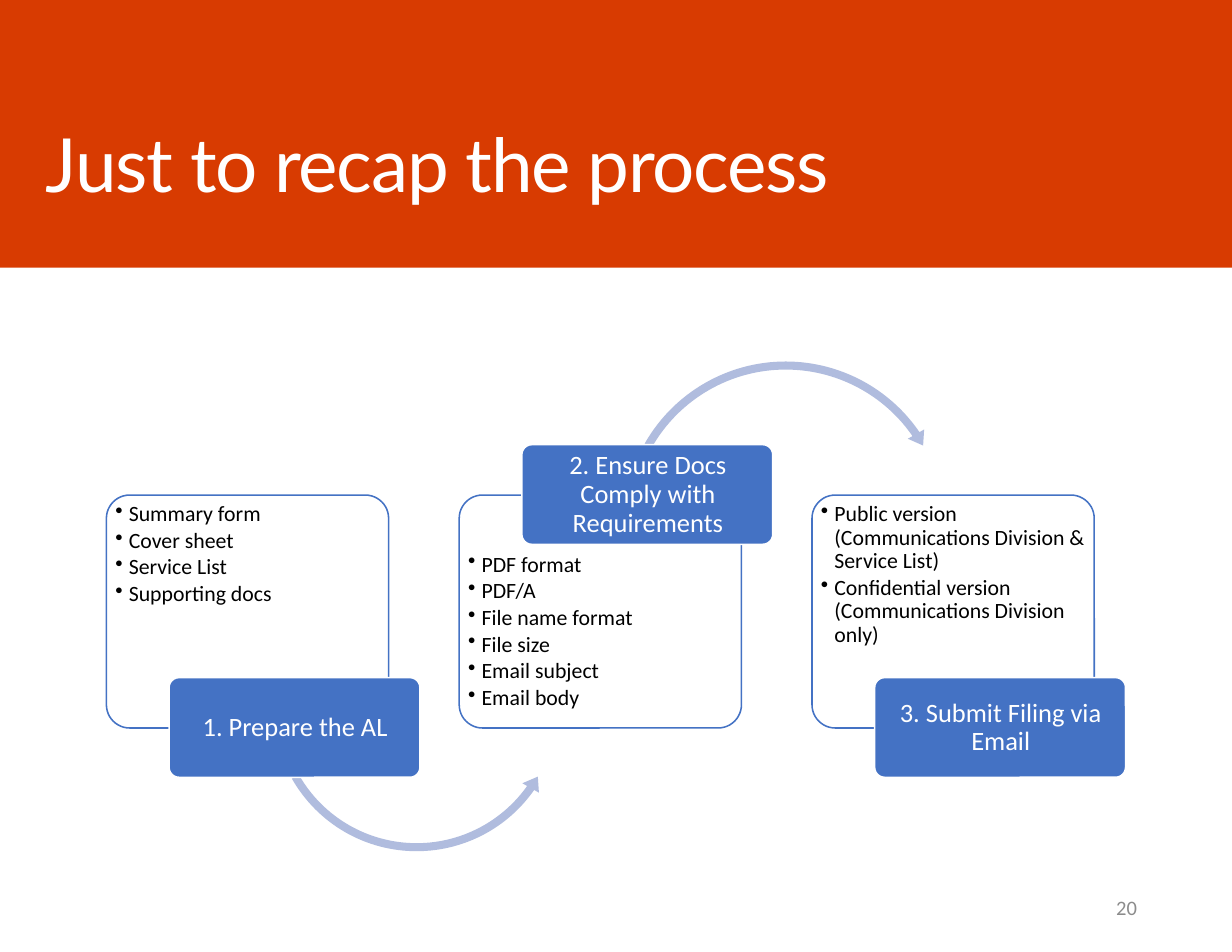
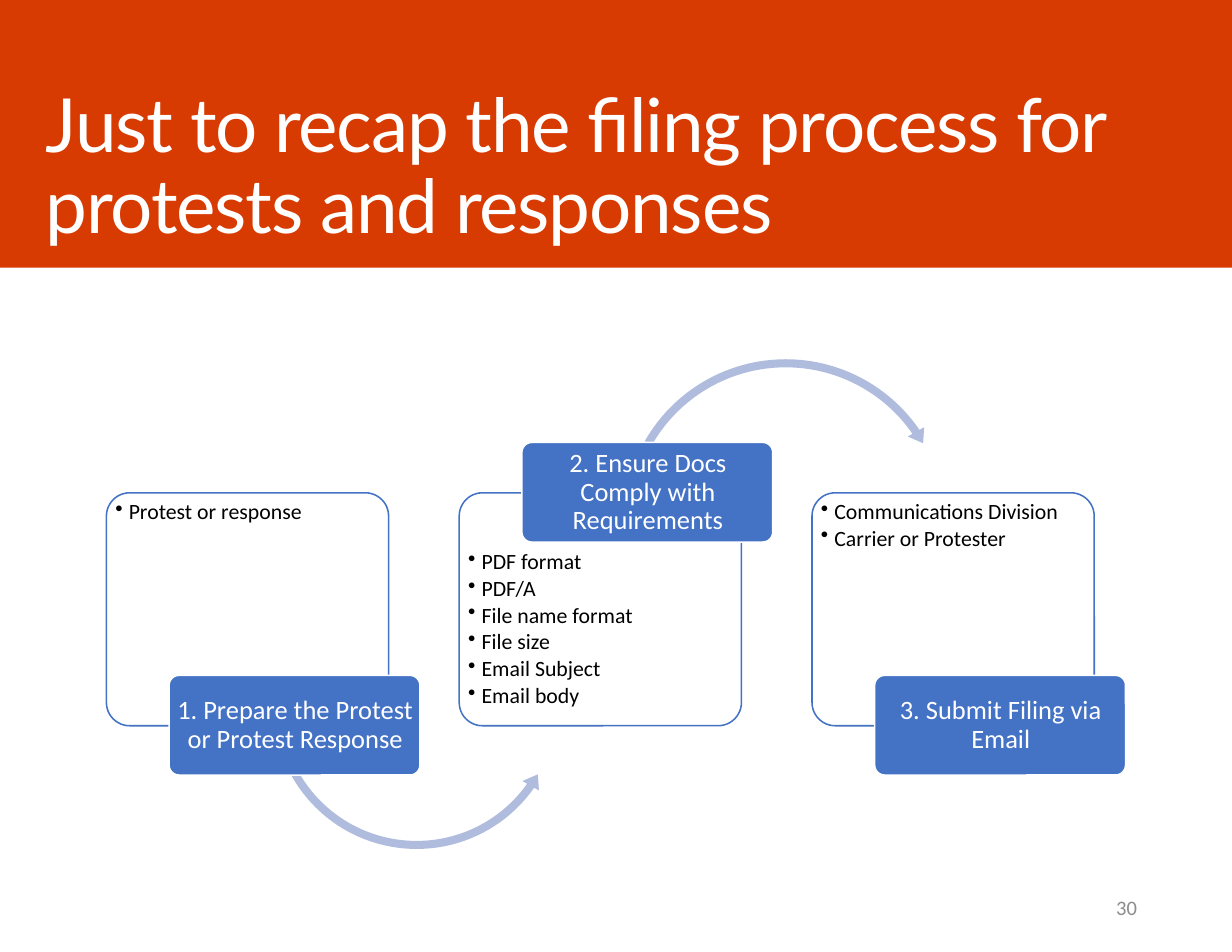
from lxml import etree
from pptx import Presentation
from pptx import util as u
from pptx.dml.color import RGBColor
from pptx.enum import shapes, text
from pptx.oxml.ns import qn

DECKS = [
    dict(title="Just to recap the process", page="20", top=4.42, steps=[
        ("1. Prepare the AL",
         ["Summary form", "Cover sheet", "Service List", "Supporting docs"]),
        ("2. Ensure Docs Comply with Requirements",
         ["PDF format", "PDF/A", "File name format", "File size",
          "Email subject", "Email body"]),
        ("3. Submit Filing via Email",
         ["Public version (Communications Division & Service List)",
          "Confidential version (Communications Division only)"]),
    ]),
    dict(title="Just to recap the filing process for protests and responses",
         page="30", top=4.4, steps=[
        ("1. Prepare the Protest or Protest Response",
         ["Protest or response"]),
        ("2. Ensure Docs Comply with Requirements",
         ["PDF format", "PDF/A", "File name format", "File size",
          "Email Subject", "Email body"]),
        ("3. Submit Filing via Email",
         ["Communications Division", "Carrier or Protester"]),
    ]),
]

WIDE, HIGH = 11, 8.5
RED = RGBColor(0xD8, 0x3B, 0x01)
BLUE = RGBColor(0x44, 0x72, 0xC4)
PALE = RGBColor(0xB0, 0xBC, 0xDE)
GRAY = RGBColor(0x8C, 0x8C, 0x8C)
WHITE = RGBColor(0xFF, 0xFF, 0xFF)
BLACK = RGBColor(0, 0, 0)

KIND = shapes.MSO_SHAPE
LEFT, STEP = 0.95, 3.15
PANEL = (2.52, 2.08)
LABEL = (2.24, 0.89)
LIST = (2.43, 1.54)
INSET = 0.03
ARROWS = [
    (KIND.LEFT_CIRCULAR_ARROW, 2.39, 0.57, 2.66,
     (0.027, 3.31, 21.065, 90.245, 0.032)),
    (KIND.CIRCULAR_ARROW, 5.52, -1.24, 2.99,
     (0.024, 2.932, 195.312, 125.755, 0.028)),
]


def box(x, y, w, h):
    return [u.Inches(n) for n in (x, y, w, h)]


def write(frame, lines, size=14, font="Calibri", color=BLACK, align="LEFT",
          anchor="TOP", inset=(0.1, 0.05), lead=0.9, after=0, track=0,
          bullet=False):
    frame.word_wrap = True
    frame.auto_size = text.MSO_AUTO_SIZE.NONE
    frame.vertical_anchor = getattr(text.MSO_ANCHOR, anchor)
    frame.margin_left = frame.margin_right = u.Inches(inset[0])
    frame.margin_top = frame.margin_bottom = u.Inches(inset[1])
    for i, line in enumerate(lines):
        para = frame.add_paragraph() if i else frame.paragraphs[0]
        para.alignment = getattr(text.PP_ALIGN, align)
        para.line_spacing = lead
        para.space_before = u.Pt(0)
        para.space_after = u.Pt(after)
        run = para.add_run()
        run.text = line
        run.font.size, run.font.name = u.Pt(size), font
        run.font.color.rgb = color
        if track:
            run.font._element.set("spc", str(int(track * 100)))
        if bullet:
            props = para._p.get_or_add_pPr()
            props.set("marL", str(u.Inches(0.12)))
            props.set("indent", str(-u.Inches(0.12)))
            etree.SubElement(props, qn("a:buChar")).set("char", "•")


def draw(home, kind, area, fill, line=None, adj=()):
    shape = home.add_shape(kind, *box(*area))
    shape.shadow.inherit = False
    shape.fill.solid()
    shape.fill.fore_color.rgb = fill
    if line is None:
        shape.line.fill.background()
    else:
        shape.line.color.rgb = line
        shape.line.width = u.Pt(1)
    for i, value in enumerate(adj):
        shape.adjustments[i] = value
    return shape


def add_step(home, i, top, name, items):
    x, high = LEFT + i * STEP, i % 2
    panel = draw(home, KIND.ROUNDED_RECTANGLE, (x, top, *PANEL), WHITE, BLUE, [0.1])
    tint = panel._element.spPr.find(qn("a:solidFill"))[0]
    etree.SubElement(tint, qn("a:alpha")).set("val", "90000")
    y = top + (0.49 if high else 0.04)
    body = home.add_textbox(*box(x + 0.05, y, *LIST))
    write(body.text_frame, items, inset=(INSET, INSET), after=2, bullet=True)

    if i < len(ARROWS):
        kind, left, drop, size, adj = ARROWS[i]
        draw(home, kind, (left, top + drop, size, size), PALE, adj=adj)

    y = top + (-0.45 if high else 1.63)
    draw(home, KIND.ROUNDED_RECTANGLE, (x + 0.56, y, *LABEL), BLUE, WHITE, [0.1])
    head = home.add_textbox(
        *box(x + 0.56 + INSET, y + INSET, LABEL[0] - 0.05, LABEL[1] - 0.05))
    write(head.text_frame, [name], size=17, color=WHITE, align="CENTER",
          anchor="MIDDLE", inset=(0.04, 0.02))


def add_slide(deck, data):
    slide = deck.slides.add_slide(deck.slide_layouts[5])
    title = slide.shapes.title
    title.left, title.top, title.width, title.height = box(0.31, 0.71, 9.96, 1.59)
    write(title.text_frame, [data["title"]], size=48, font="Lato", color=WHITE,
          anchor="MIDDLE", track=-0.8)
    band = draw(slide.shapes, KIND.RECTANGLE, (0, 0, WIDE, 2.39), RED)
    title._element.addprevious(band._element)

    flow = slide.shapes.add_group_shape().shapes
    for i, (name, items) in enumerate(data["steps"]):
        add_step(flow, i, data["top"], name, items)

    page = slide.shapes.add_textbox(*box(7.77, 7.88, 2.48, 0.45))
    write(page.text_frame, [data["page"]], size=13.2, color=GRAY, align="RIGHT",
          anchor="MIDDLE", lead=1.0)


def main():
    deck = Presentation()
    deck.slide_width, deck.slide_height = u.Inches(WIDE), u.Inches(HIGH)
    for data in DECKS:
        add_slide(deck, data)
    deck.save("out.pptx")


if __name__ == "__main__":
    main()
